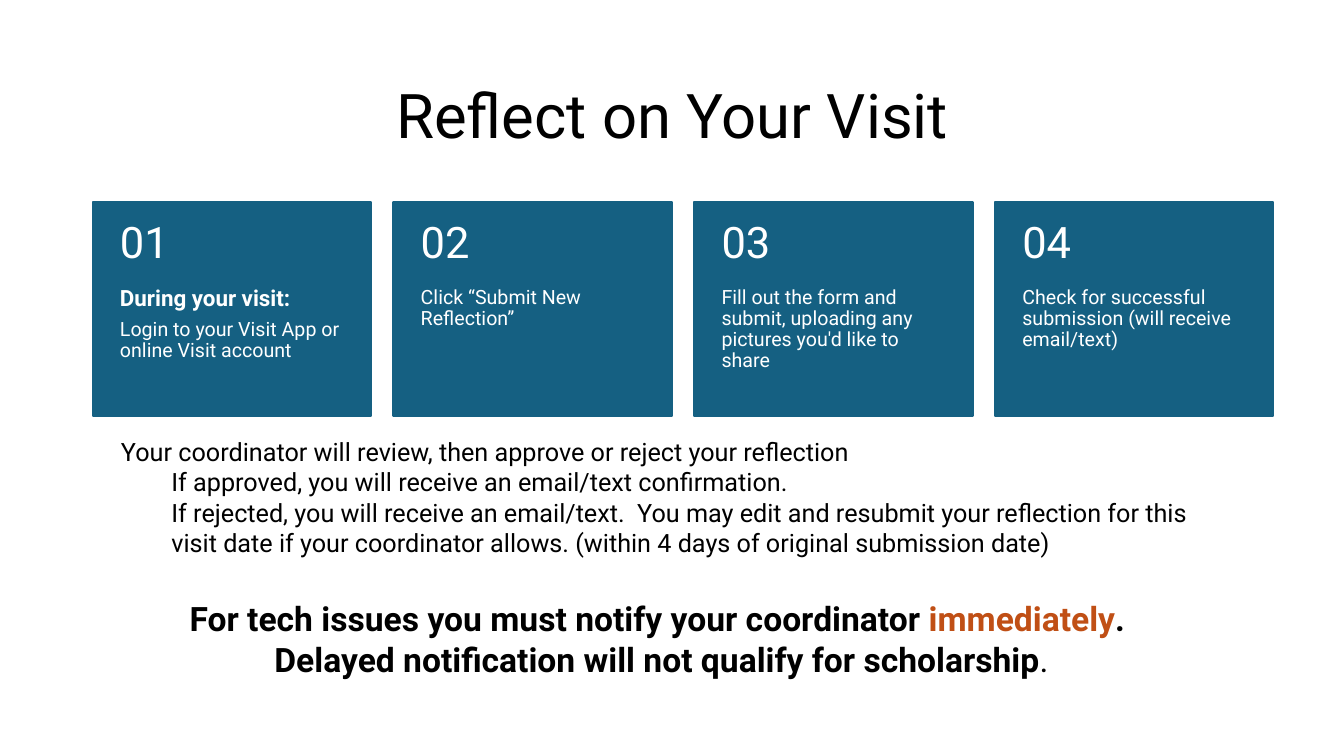
"""Builds the "Reflect on Your Visit" slide with four step cards and notes."""
from pptx import Presentation
from pptx import util as u
from pptx.dml.color import RGBColor
from pptx.enum import shapes, text
from pptx.oxml.ns import qn
from lxml import etree

FONT = "Roboto"
BLACK, WHITE, BLUE, ORANGE = "000000", "FFFFFF", "156082", "C04F15"
TITLE = "Reflect on Your Visit"
STEPS = [
    [("During your visit:", 16, True),
     ("Login to your Visit App or online Visit account", 14, False)],
    [("Click “Submit New Reflection”", 14, False)],
    [("Fill out the form and submit, uploading any pictures you'd like to share", 14, False)],
    [("Check for successful submission (will receive email/text)", 14, False)],
]
REVIEW = [
    (0, "Your coordinator will review, then approve or reject your reflection"),
    (1, "If approved, you will receive an email/text confirmation."),
    (1, "If rejected, you will receive an email/text.  You may edit and resubmit your "
        "reflection for this visit date if your coordinator allows. "
        "(within 4 days of original submission date)"),
]
WARNING = [
    [("For tech issues you must notify your coordinator ", BLACK, True),
     ("immediately", ORANGE, True), (". ", BLACK, True)],
    [("Delayed notification will not qualify for scholarship", BLACK, True),
     (".", BLACK, False)],
]
CARDS_LEFT, CARDS_RIGHT, CARD_TOP = 0.92, 12.63, 2
CARD_WIDTH, CARD_HEIGHT, NUMBER_HEIGHT = 2.76, 2.13, 0.85
CARD_PITCH = (CARDS_RIGHT - CARDS_LEFT - CARD_WIDTH) / (len(STEPS) - 1)


def rgb(color):
    return RGBColor.from_string(color)


def inches(*lengths):
    return [u.Inches(length) for length in lengths]


def place(shape, *box):
    shape.left, shape.top, shape.width, shape.height = inches(*box)


def set_frame(frame, anchor, insets=(0.1, 0.05, 0.1, 0.05)):
    frame.word_wrap = True
    frame.auto_size = text.MSO_AUTO_SIZE.NONE
    frame.vertical_anchor = anchor
    (frame.margin_left, frame.margin_top,
     frame.margin_right, frame.margin_bottom) = inches(*insets)


def add_paragraph(frame, index, align=text.PP_ALIGN.LEFT, spacing=1.0, after=0):
    paragraph = frame.add_paragraph() if index else frame.paragraphs[0]
    paragraph.alignment = align
    paragraph.line_spacing = spacing
    paragraph.space_before = u.Pt(0)
    paragraph.space_after = u.Pt(after)
    return paragraph


def add_run(paragraph, words, size, color, bold=False):
    run = paragraph.add_run()
    run.text = words
    run.font.name = FONT
    run.font.size = u.Pt(size)
    run.font.bold = bold
    run.font.color.rgb = rgb(color)


def add_text_box(slide, box, anchor, **options):
    frame = slide.shapes.add_textbox(*inches(*box)).text_frame
    set_frame(frame, anchor, **options)
    return frame


def add_card(slide, index, lines):
    left = CARDS_LEFT + index * CARD_PITCH
    card = slide.shapes.add_shape(
        shapes.MSO_SHAPE.RECTANGLE, *inches(left, CARD_TOP, CARD_WIDTH, CARD_HEIGHT))
    card.shadow.inherit = False
    card.fill.solid()
    card.fill.fore_color.rgb = rgb(BLUE)
    card.line.color.rgb = rgb(BLUE)
    card.line.width = u.Pt(1.5)

    body = add_text_box(
        slide, (left, CARD_TOP + NUMBER_HEIGHT, CARD_WIDTH, CARD_HEIGHT - NUMBER_HEIGHT),
        text.MSO_ANCHOR.TOP, insets=(0.27, 0, 0.27, 0.36))
    for position, (words, size, bold) in enumerate(lines):
        paragraph = add_paragraph(body, position, spacing=0.9, after=size * 0.35)
        add_run(paragraph, words, size, WHITE, bold)

    number = add_text_box(
        slide, (left, CARD_TOP, CARD_WIDTH, NUMBER_HEIGHT),
        text.MSO_ANCHOR.MIDDLE, insets=(0.27, 0.18, 0.27, 0.18))
    add_run(add_paragraph(number, 0, spacing=0.9), f"{index + 1:02d}", 31, WHITE)


def fill_title(title):
    place(title, 0.92, 0.73, 11.5, 0.89)
    set_frame(title.text_frame, text.MSO_ANCHOR.MIDDLE)
    paragraph = add_paragraph(title.text_frame, 0, text.PP_ALIGN.CENTER, 0.9)
    add_run(paragraph, TITLE, 44, BLACK)


def fill_review(body):
    place(body, 1.1, 4.28, 11.13, 1.31)
    set_frame(body.text_frame, text.MSO_ANCHOR.TOP)
    for index, (level, words) in enumerate(REVIEW):
        paragraph = add_paragraph(body.text_frame, index)
        paragraph.level = level
        properties = paragraph._p.get_or_add_pPr()
        properties.set("marL", str(u.Inches(0.5 * level)))
        properties.set("indent", "0")
        etree.SubElement(properties, qn("a:buNone"))
        add_run(paragraph, words, 18, BLACK)


def add_warning(slide):
    frame = add_text_box(slide, (0.9, 5.96, 11.32, 0.85), text.MSO_ANCHOR.TOP)
    for index, runs in enumerate(WARNING):
        paragraph = add_paragraph(frame, index, text.PP_ALIGN.CENTER, 0.8, 6)
        for words, color, bold in runs:
            add_run(paragraph, words, 24, color, bold)


def main():
    presentation = Presentation()
    presentation.slide_width, presentation.slide_height = inches(13.33, 7.5)
    slide = presentation.slides.add_slide(presentation.slide_layouts[1])
    fill_title(slide.shapes.title)
    for index, lines in enumerate(STEPS):
        add_card(slide, index, lines)
    add_warning(slide)
    fill_review(slide.placeholders[1])
    presentation.save("out.pptx")


if __name__ == "__main__":
    main()
